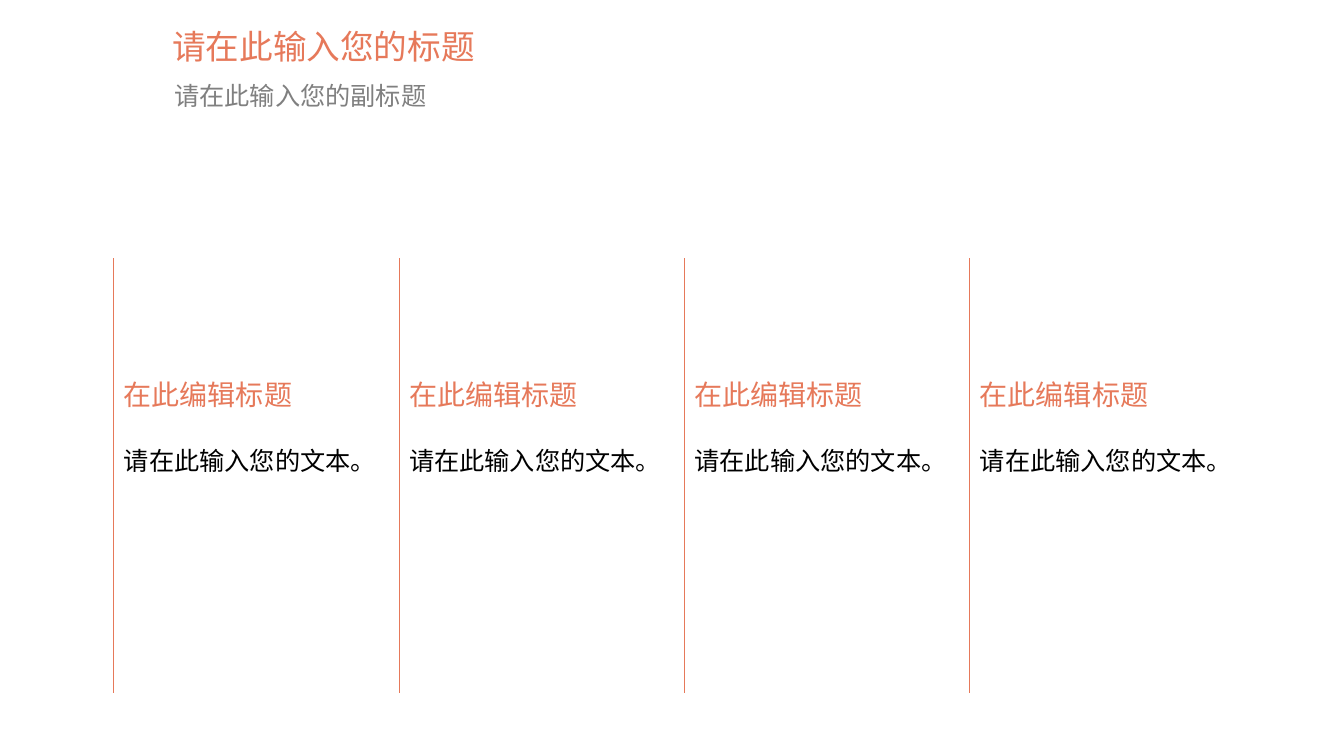
import pptx
import pptx.util
import pptx.dml.color
import pptx.enum.shapes
import pptx.enum.text
from lxml import etree
from pptx.oxml.ns import qn

Inches = pptx.util.Inches
Pt = pptx.util.Pt
RGBColor = pptx.dml.color.RGBColor
Anchor = pptx.enum.text.MSO_ANCHOR

CORAL = RGBColor(0xE6, 0x79, 0x5A)
GRAY = RGBColor(0x80, 0x80, 0x80)
BLACK = RGBColor(0x00, 0x00, 0x00)

COLUMN_COUNT = 4
COLUMN_LEFT = 1.13
COLUMN_PITCH = 2.83
COLUMN_WIDTH = 2.57


class SlideWriter:
    font_name = "Arial"
    rule_width = Pt(0.75)

    def __init__(self, slide):
        self.slide = slide

    def text(self, wording, left, top, width, height, size, color,
             anchor=Anchor.TOP, line_spacing=None):
        box = self.slide.shapes.add_textbox(
            Inches(left), Inches(top), Inches(width), Inches(height))
        frame = box.text_frame
        frame.word_wrap = True
        frame.vertical_anchor = anchor
        paragraph = frame.paragraphs[0]
        paragraph.line_spacing = line_spacing
        run = paragraph.add_run()
        run.text = wording
        run.font.color.rgb = color
        font_format = {"name": self.font_name, "size": Pt(size)}
        for attribute, value in font_format.items():
            setattr(run.font, attribute, value)

    def vertical_rule(self, left, top, bottom):
        rule = self.slide.shapes.add_connector(
            pptx.enum.shapes.MSO_CONNECTOR.STRAIGHT,
            Inches(left), Inches(top), Inches(left), Inches(bottom))
        rule.line.color.rgb = CORAL
        rule.line.width = self.rule_width
        etree.SubElement(rule.element.spPr, qn("a:effectLst"))


def main():
    presentation = pptx.Presentation()
    presentation.slide_width = Inches(13.33)
    presentation.slide_height = Inches(7.5)
    writer = SlideWriter(
        presentation.slides.add_slide(presentation.slide_layouts[6]))

    for column in range(COLUMN_COUNT):
        left = COLUMN_LEFT + column * COLUMN_PITCH
        writer.text("在此编辑标题", left, 3.46, COLUMN_WIDTH, 0.91,
                    20, CORAL, anchor=Anchor.MIDDLE)
        writer.text("请在此输入您的文本。", left, 4.37, COLUMN_WIDTH, 2.52,
                    18, BLACK)
        writer.vertical_rule(left, 2.56, 6.88)

    writer.text("请在此输入您的标题", 1.61, 0.14, 9.56, 0.64,
                24, CORAL, anchor=Anchor.MIDDLE)
    writer.text("请在此输入您的副标题", 1.63, 0.78, 9.54, 0.54,
                18, GRAY, line_spacing=0.9)

    presentation.save("out.pptx")


if __name__ == "__main__":
    main()
